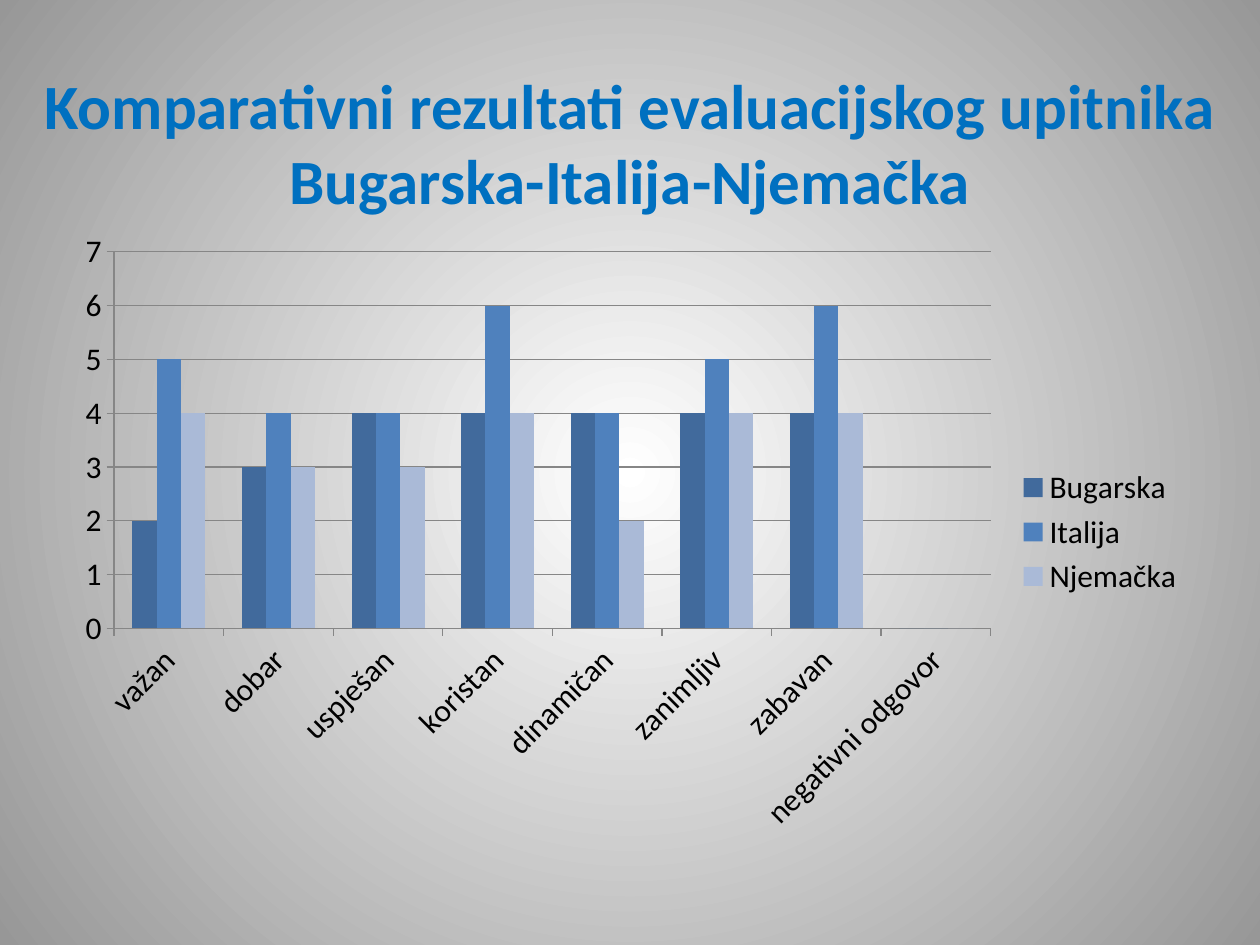
"""Build a slide comparing questionnaire results from Bulgaria, Italy and Germany."""
import lxml.etree
import pptx
import pptx.chart.data
import pptx.dml.color
import pptx.enum.chart
import pptx.enum.text
import pptx.oxml.ns
import pptx.util

WHITE = pptx.dml.color.RGBColor(0xFF, 0xFF, 0xFF)
EDGE_GREY = pptx.dml.color.RGBColor(0x97, 0x97, 0x97)
LINE_GREY = pptx.dml.color.RGBColor(0x86, 0x86, 0x86)
BLACK = pptx.dml.color.RGBColor(0, 0, 0)
TITLE_BLUE = pptx.dml.color.RGBColor(0x00, 0x70, 0xC0)
DARK_BLUE = pptx.dml.color.RGBColor(0x41, 0x6A, 0x9C)
MID_BLUE = pptx.dml.color.RGBColor(0x4F, 0x81, 0xBD)
PALE_BLUE = pptx.dml.color.RGBColor(0xAA, 0xBA, 0xD7)

QUALITIES = ["važan", "dobar", "uspješan", "koristan", "dinamičan",
             "zanimljiv", "zabavan", "negativni odgovor"]
COUNTRIES = [
    ("Bugarska", [2, 3, 4, 4, 4, 4, 4, 0], DARK_BLUE),
    ("Italija", [5, 4, 4, 6, 4, 5, 6, 0], MID_BLUE),
    ("Njemačka", [4, 3, 3, 4, 2, 4, 4, 0], PALE_BLUE),
]

deck = pptx.Presentation()
deck.slide_width = pptx.util.Inches(10)
deck.slide_height = pptx.util.Inches(7.5)
width, height = deck.slide_width, deck.slide_height
slide = deck.slides.add_slide(deck.slide_layouts[6])

backdrop = slide.background.fill
backdrop.gradient()
for stop, position, shade in zip(backdrop.gradient_stops, (0, 1), (WHITE, EDGE_GREY)):
    stop.position = position
    stop.color.rgb = shade
gradient = slide.background._cSld.find(".//" + pptx.oxml.ns.qn("a:gradFill"))
linear = gradient.find(pptx.oxml.ns.qn("a:lin"))
radial = lxml.etree.Element(pptx.oxml.ns.qn("a:path"), path="circle")
lxml.etree.SubElement(radial, pptx.oxml.ns.qn("a:fillToRect"),
                      {side: "50000" for side in "ltrb"})
gradient.replace(linear, radial)

heading = slide.shapes.add_textbox(0, int(height * 0.04), width, int(height * 0.22)).text_frame
heading.word_wrap = True
heading.vertical_anchor = pptx.enum.text.MSO_ANCHOR.MIDDLE
title = heading.paragraphs[0]
title.text = "Komparativni rezultati evaluacijskog upitnika\vBugarska-Italija-Njemačka"
title.alignment = pptx.enum.text.PP_ALIGN.CENTER
title.font.name = "Calibri"
title.font.size = pptx.util.Pt(36)
title.font.bold = True
title.font.color.rgb = TITLE_BLUE

results = pptx.chart.data.CategoryChartData()
results.categories = QUALITIES
for country, scores, _ in COUNTRIES:
    results.add_series(country, scores)
chart = slide.shapes.add_chart(
    pptx.enum.chart.XL_CHART_TYPE.COLUMN_CLUSTERED,
    int(width * 0.05), int(height * 0.233), int(width * 0.9), int(height * 0.66), results).chart
chart.has_title = False
chart.font.name = "Calibri"
chart.font.size = pptx.util.Pt(18)
chart.font.color.rgb = BLACK
chart.has_legend = True
chart.legend.position = pptx.enum.chart.XL_LEGEND_POSITION.RIGHT
chart.legend.include_in_layout = False

columns = chart.plots[0]
columns.gap_width = 150
columns.overlap = 0
columns.vary_by_categories = False
for series, (_, _, shade) in zip(columns.series, COUNTRIES):
    series.format.fill.solid()
    series.format.fill.fore_color.rgb = shade

scale = chart.value_axis
scale.minimum_scale, scale.maximum_scale, scale.major_unit = 0, 7, 1
scale.has_major_gridlines = True
for ruled in (chart.category_axis, scale, scale.major_gridlines):
    ruled.format.line.color.rgb = LINE_GREY
    ruled.format.line.width = pptx.util.Pt(0.75)
for axis in (chart.category_axis, scale):
    axis.major_tick_mark = pptx.enum.chart.XL_TICK_MARK.OUTSIDE
    axis.minor_tick_mark = pptx.enum.chart.XL_TICK_MARK.NONE
labels = chart.category_axis.tick_labels
labels.font.size = pptx.util.Pt(18)
chart.category_axis._element.find(".//" + pptx.oxml.ns.qn("a:bodyPr")).set("rot", "-2700000")

deck.save("out.pptx")
